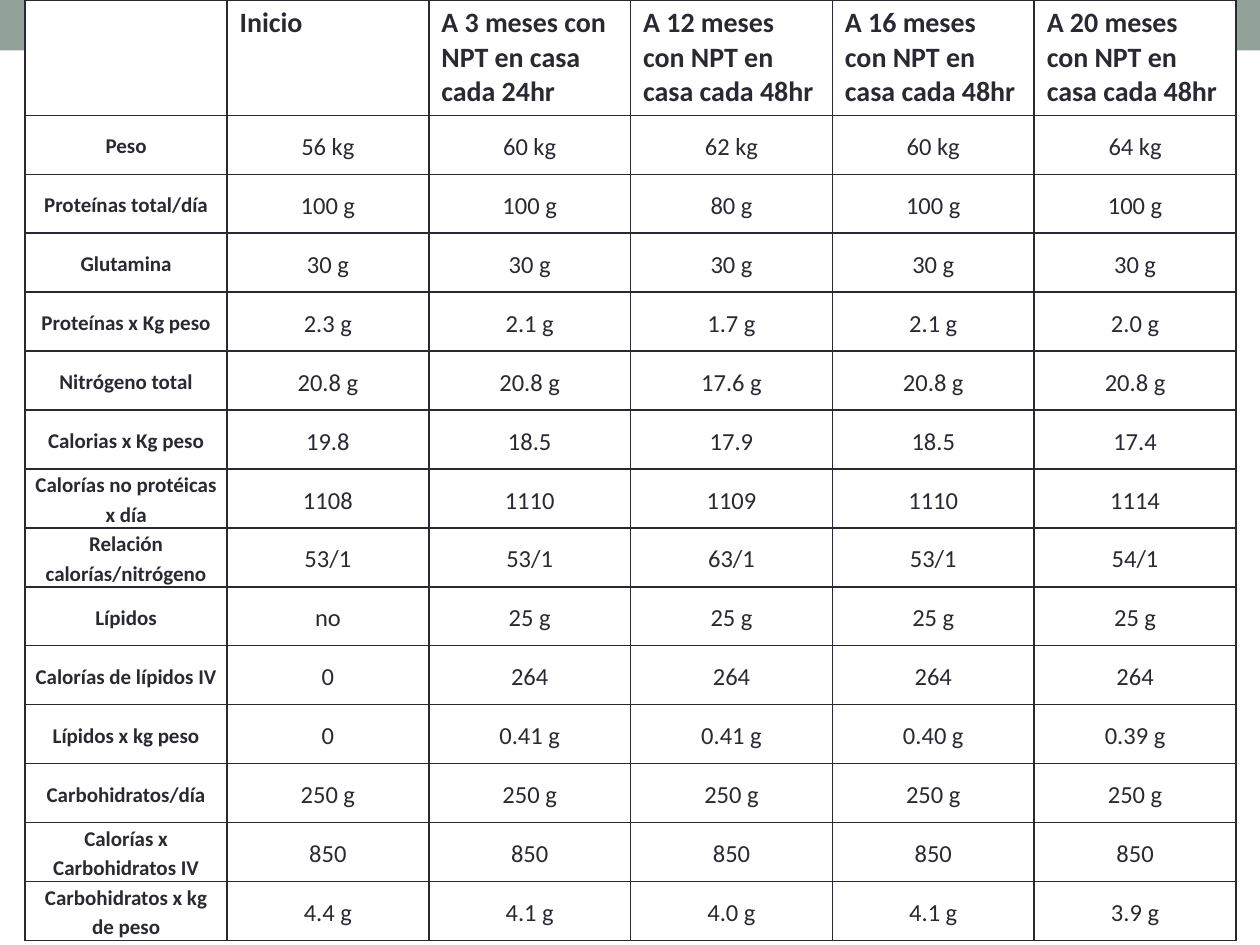
from lxml.etree import SubElement
from pptx import Presentation
from pptx.dml.color import RGBColor
from pptx.enum.shapes import MSO_SHAPE
from pptx.enum.text import MSO_ANCHOR, PP_ALIGN
from pptx.oxml.ns import qn
from pptx.util import Inches, Pt


def paint(fill, color):
    fill.solid()
    fill.fore_color.rgb = RGBColor.from_string(color)


def add_borders(cell, color, width):
    properties = cell._tc.get_or_add_tcPr()
    for position, side in enumerate(("lnL", "lnR", "lnT", "lnB")):
        line = properties.makeelement(qn(f"a:{side}"), {"w": str(Pt(width))})
        properties.insert(position, line)
        solid = SubElement(line, qn("a:solidFill"))
        SubElement(solid, qn("a:srgbClr"), val=color)


INK = "292934"
BAND = "93A299"
WHITE = "FFFFFF"

measurements = [
    ["", "Inicio", "A 3 meses con NPT en casa cada 24hr", "A 12 meses con NPT en casa cada 48hr",
     "A 16 meses con NPT en casa cada 48hr", "A 20 meses con NPT en casa cada 48hr"],
    ["Peso", "56 kg", "60 kg", "62 kg", "60 kg", "64 kg"],
    ["Proteínas total/día", "100 g", "100 g", "80 g", "100 g", "100 g"],
    ["Glutamina", "30 g", "30 g", "30 g", "30 g", "30 g"],
    ["Proteínas x Kg peso", "2.3 g", "2.1 g", "1.7 g", "2.1 g", "2.0 g"],
    ["Nitrógeno total", "20.8 g", "20.8 g", "17.6 g", "20.8 g", "20.8 g"],
    ["Calorias x Kg peso", "19.8", "18.5", "17.9", "18.5", "17.4"],
    ["Calorías no protéicas x día", "1108", "1110", "1109", "1110", "1114"],
    ["Relación calorías/nitrógeno", "53/1", "53/1", "63/1", "53/1", "54/1"],
    ["Lípidos", "no", "25 g", "25 g", "25 g", "25 g"],
    ["Calorías de lípidos IV", "0", "264", "264", "264", "264"],
    ["Lípidos x kg peso", "0", "0.41 g", "0.41 g", "0.40 g", "0.39 g"],
    ["Carbohidratos/día", "250 g", "250 g", "250 g", "250 g", "250 g"],
    ["Calorías x Carbohidratos IV", "850", "850", "850", "850", "850"],
    ["Carbohidratos x kg de peso", "4.4 g", "4.1 g", "4.0 g", "4.1 g", "3.9 g"],
]
row_count = len(measurements)
column_count = len(measurements[0])

body_cell = {
    "vertical_anchor": MSO_ANCHOR.MIDDLE,
    "margin_left": Inches(0.07),
    "margin_right": Inches(0.07),
    "margin_top": 0,
    "margin_bottom": 0,
}
body_paragraph = {"alignment": PP_ALIGN.CENTER, "line_spacing": 1.15, "space_after": Pt(10)}
heading_font = {"name": "Calibri", "size": Pt(16), "bold": True}
label_font = {"name": "Calibri", "size": Pt(12), "bold": True}
value_font = {"name": "Calibri", "size": Pt(14), "bold": False}

prs = Presentation()
prs.slide_width = Inches(10)
prs.slide_height = Inches(7.5)
slide = prs.slides.add_slide(prs.slide_layouts[6])
paint(slide.background.fill, WHITE)

top_band = slide.shapes.add_shape(MSO_SHAPE.RECTANGLE, 0, 0, Inches(10), Inches(0.4))
top_band.shadow.inherit = False
paint(top_band.fill, BAND)
top_band.line.fill.background()

nutrition = slide.shapes.add_table(
    row_count, column_count, Inches(0.2), 0, Inches(9.61), Inches(7.45)
).table
nutrition.first_row = False
nutrition.horz_banding = False
for row_index, row in enumerate(nutrition.rows):
    row.height = Inches(6.55 / (row_count - 1)) if row_index else Inches(0.9)

for row_index, entries in enumerate(measurements):
    for column_index, entry in enumerate(entries):
        cell = nutrition.cell(row_index, column_index)
        paint(cell.fill, WHITE)
        add_borders(cell, INK, 1)
        if not entry:
            continue
        paragraph = cell.text_frame.paragraphs[0]
        run = paragraph.add_run()
        run.text = entry
        paint(run.font.fill, INK)
        if row_index == 0:
            formats = [(run.font, heading_font)]
        else:
            font_format = value_font if column_index else label_font
            formats = [(cell, body_cell), (paragraph, body_paragraph), (run.font, font_format)]
        for target, settings in formats:
            for attribute, value in settings.items():
                setattr(target, attribute, value)

prs.save("out.pptx")
